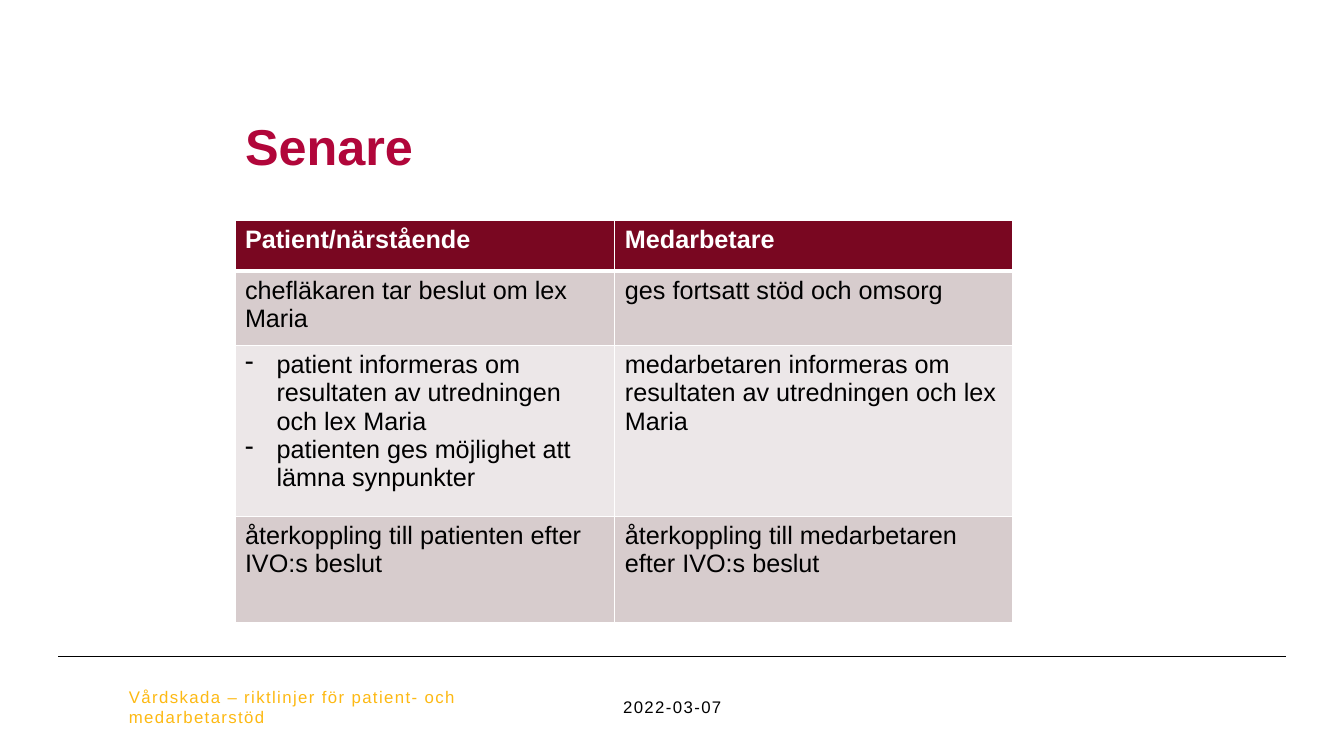
"""Build the slide on later steps for patients and staff."""
from lxml import etree
from pptx import Presentation
from pptx.dml.color import RGBColor
from pptx.enum import shapes, text
from pptx.oxml import ns
from pptx.util import Pt

ROWS = [
    (36, "790721", [["Patient/närstående"], ["Medarbetare"]]),
    (53.3, "D7CCCD", [["chefläkaren tar beslut om lex Maria"],
                      ["ges fortsatt stöd och omsorg"]]),
    (121.7, "ECE7E8", [
        ["patient informeras om resultaten av utredningen och lex Maria",
         "patienten ges möjlighet att lämna synpunkter"],
        ["medarbetaren informeras om resultaten av utredningen och lex Maria"]]),
    (76.3, "D7CCCD", [["återkoppling till patienten efter IVO:s beslut"],
                      ["återkoppling till medarbetaren efter IVO:s beslut"]]),
]
COLS = [271.4, 284.4]


def paint(fill, color):
    """Give a fill a solid colour."""
    fill.solid()
    fill.fore_color.rgb = RGBColor.from_string(color)


def write(para, words, size, color, bold=False, space=0):
    """Add a run of text to a paragraph."""
    run = para.add_run()
    run.text = words
    font = run.font
    font.name, font.size, font.bold = "Arial", Pt(size), bold
    paint(font.fill, color)
    if space:
        run._r.get_or_add_rPr().set("spc", str(space * 100))


def place(shape, left, top, width, height):
    """Set the position and size of a shape."""
    shape.left, shape.top = Pt(left), Pt(top)
    shape.width, shape.height = Pt(width), Pt(height)


def title(slide, words):
    """Fill the title placeholder."""
    shape = slide.shapes.title
    place(shape, 167.8, 75.6, 572.4, 51.1)
    frame = shape.text_frame
    frame.vertical_anchor = text.MSO_ANCHOR.BOTTOM
    frame.margin_bottom = Pt(1.5)
    para = frame.paragraphs[0]
    para.alignment = text.PP_ALIGN.LEFT
    write(para, words, 36, "B1063A", True)


def label(slide, words, left, width, color, align):
    """Add a text box in the footer."""
    box = slide.shapes.add_textbox(Pt(left), Pt(490.3), Pt(width), Pt(28.8))
    frame = box.text_frame
    frame.word_wrap = True
    frame.vertical_anchor = text.MSO_ANCHOR.MIDDLE
    para = frame.paragraphs[0]
    para.alignment = align
    write(para, words, 12, color, space=1)


def rule(slide, left, right, top):
    """Draw the thin line above the footer."""
    line = slide.shapes.add_connector(
        shapes.MSO_CONNECTOR.STRAIGHT, Pt(left), Pt(top), Pt(right), Pt(top))
    line.line.width = Pt(0.5)
    paint(line.line.fill, "000000")
    etree.SubElement(line._element.spPr, ns.qn("a:effectLst"))


def edge(cell, side, width):
    """Draw a white border on one side of a cell."""
    props = cell._tc.get_or_add_tcPr()
    line = etree.SubElement(props, ns.qn("a:ln" + side), w=str(Pt(width)))
    fill = etree.SubElement(line, ns.qn("a:solidFill"))
    etree.SubElement(fill, ns.qn("a:srgbClr"), val="FFFFFF")


def dash(para):
    """Turn a paragraph into a dashed list item."""
    props = para._p.get_or_add_pPr()
    props.set("marL", str(Pt(22.5)))
    props.set("indent", str(-Pt(22.5)))
    etree.SubElement(props, ns.qn("a:buChar"), char="-")


def fill_cell(cell, row, color, items):
    """Set the borders, fill and text of a cell."""
    widths = {"L": 1, "R": 1, "T": 3 if row == 1 else 1, "B": 3 if row == 0 else 1}
    for side, width in widths.items():
        edge(cell, side, width)
    paint(cell.fill, color)
    head = row == 0
    frame = cell.text_frame
    for num, words in enumerate(items):
        para = frame.add_paragraph() if num else frame.paragraphs[0]
        if len(items) > 1:
            dash(para)
        write(para, words, 18, "FFFFFF" if head else "000000", head)


def grid(slide):
    """Add the table of steps."""
    high = sum(row[0] for row in ROWS)
    table = slide.shapes.add_table(
        len(ROWS), len(COLS), Pt(167.8), Pt(157.7), Pt(sum(COLS)), Pt(high)).table
    for col, width in zip(table.columns, COLS):
        col.width = Pt(width)
    for row, (height, color, cells) in enumerate(ROWS):
        table.rows[row].height = Pt(height)
        for col, items in enumerate(cells):
            fill_cell(table.cell(row, col), row, color, items)


def main():
    """Build and save the slide."""
    deck = Presentation()
    deck.slide_width, deck.slide_height = Pt(960), Pt(540)
    slide = deck.slides.add_slide(deck.slide_layouts[5])
    rule(slide, 41.8, 918.7, 468.7)
    title(slide, "Senare")
    label(slide, "2022-03-07", 382.3, 195.8, "000000", text.PP_ALIGN.CENTER)
    label(slide, "Vårdskada – riktlinjer för patient- och medarbetarstöd",
          85, 283.7, "FDB913", text.PP_ALIGN.LEFT)
    grid(slide)
    deck.save("out.pptx")


if __name__ == "__main__":
    main()
